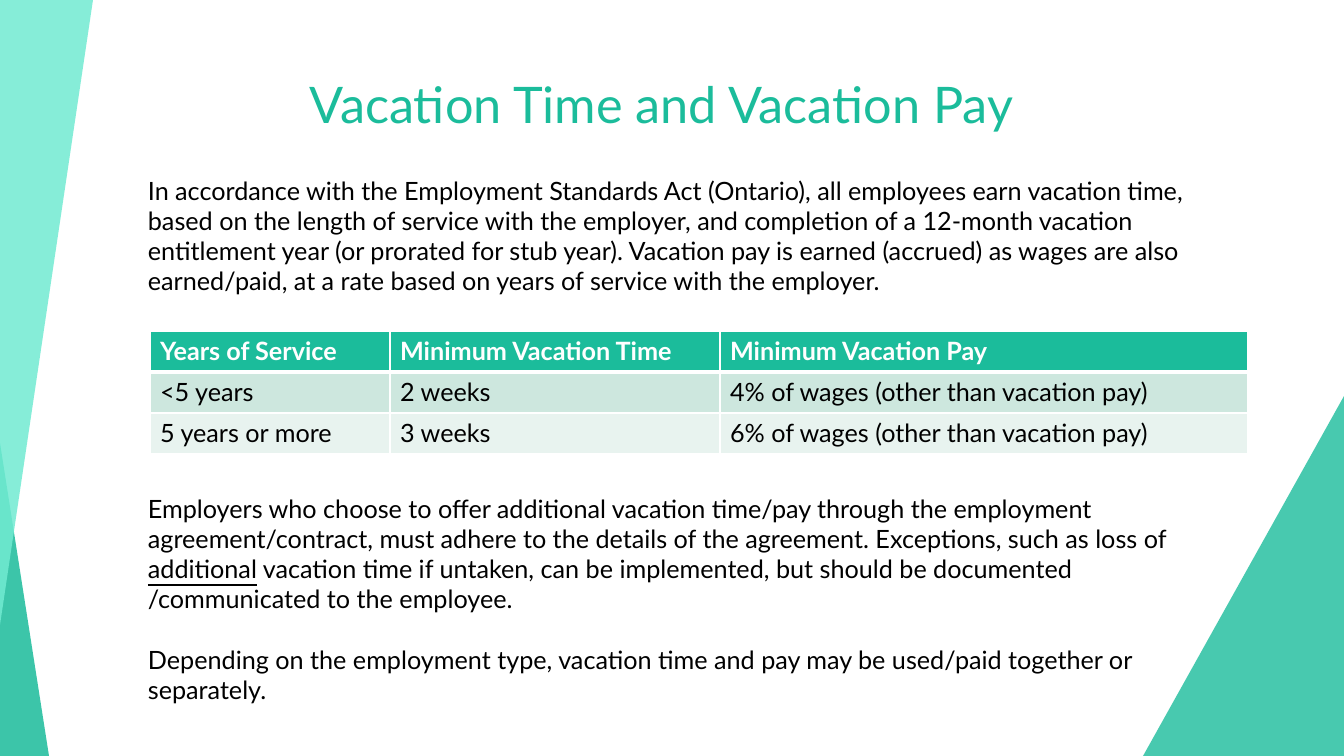
from lxml import etree
from pptx import Presentation, util as u
from pptx.dml.color import RGBColor
from pptx.enum import shapes, text
from pptx.oxml import ns

COLORS = {"green": "1BBC9B", "mint": "71EBD2", "white": "FFFFFF", "black": "000000",
          "row_dark": "CDE7DE", "row_light": "E8F3EF"}
PX = 914400 / 100.8


def px(value):
    return u.Emu(round(value * PX))


class SlideBuilder:
    """Holds the slide and its style, and adds each kind of element."""

    def __init__(self, slide, font="Lato", size=18):
        self.slide = slide
        self.font = font
        self.size = size

    def triangle(self, box, color, apex, opacity, rotation=0):
        shape = self.slide.shapes.add_shape(
            shapes.MSO_SHAPE.ISOSCELES_TRIANGLE, *map(px, box))
        shape.shadow.inherit = False
        shape.adjustments[0] = apex
        shape.rotation = rotation
        shape.fill.solid()
        shape.fill.fore_color.rgb = RGBColor.from_string(COLORS[color])
        shape.line.fill.background()
        fill_color = shape.fill._xPr.find(".//" + ns.qn("a:srgbClr"))
        etree.SubElement(fill_color, ns.qn("a:alpha"), val=str(opacity * 1000))

    def run(self, paragraph, words, color="black", size=None, bold=False, underline=False):
        run = paragraph.add_run()
        run.text = words
        run.font.name = self.font
        run.font.size = u.Pt(size or self.size)
        run.font.bold = bold
        run.font.underline = underline
        run.font.color.rgb = RGBColor.from_string(COLORS[color])

    def textbox(self, box, paragraphs, color="black", size=None, align=None, gap=0):
        frame = self.slide.shapes.add_textbox(*map(px, box)).text_frame
        frame.word_wrap = True
        for index, runs in enumerate(paragraphs):
            paragraph = frame.add_paragraph() if index else frame.paragraphs[0]
            paragraph.alignment = align
            if index:
                paragraph.space_before = u.Pt(gap)
            for words, underline in runs:
                self.run(paragraph, words, color, size, underline=underline)

    def border(self, cell, position, side, width):
        line = etree.Element(ns.qn("a:" + side), w=str(u.Pt(width)))
        fill = etree.SubElement(line, ns.qn("a:solidFill"))
        etree.SubElement(fill, ns.qn("a:srgbClr"), val=COLORS["white"])
        cell._tc.get_or_add_tcPr().insert(position, line)

    def table(self, left, top, widths, row_height, rows, fills):
        table = self.slide.shapes.add_table(
            len(rows), len(widths), px(left), px(top),
            px(sum(widths)), px(row_height * len(rows))).table
        for column, width in zip(table.columns, widths):
            column.width = px(width)
        for row_index, (row, fill) in enumerate(zip(rows, fills)):
            table.rows[row_index].height = px(row_height)
            header = row_index == 0
            edges = {"lnL": 1, "lnR": 1, "lnT": 3 if row_index == 1 else 1,
                     "lnB": 3 if header else 1}
            for column_index, words in enumerate(row):
                cell = table.cell(row_index, column_index)
                cell.fill.solid()
                cell.fill.fore_color.rgb = RGBColor.from_string(COLORS[fill])
                self.run(cell.text_frame.paragraphs[0], words,
                         "white" if header else "black", bold=header)
                for position, (side, width) in enumerate(edges.items()):
                    self.border(cell, position, side, width)


def main():
    presentation = Presentation()
    presentation.slide_width, presentation.slide_height = px(1344), px(756)
    builder = SlideBuilder(presentation.slides.add_slide(presentation.slide_layouts[6]))

    builder.triangle((0, 443, 49, 313), "green", apex=0, opacity=85)
    builder.triangle((0, 0, 93, 625), "mint", apex=1, opacity=85, rotation=180)
    builder.triangle((1143, 396, 201, 360), "green", apex=1, opacity=80)

    builder.textbox((203, 68, 917, 145), [[("Vacation Time and Vacation Pay", False)]],
                    color="green", size=36, align=text.PP_ALIGN.CENTER)
    builder.table(150, 331, (240, 330, 528), 41, (
        ("Years of Service", "Minimum Vacation Time", "Minimum Vacation Pay"),
        ("<5 years", "2 weeks", "4% of wages (other than vacation pay)"),
        ("5 years or more", "3 weeks", "6% of wages (other than vacation pay)"),
    ), ("green", "row_dark", "row_light"))
    builder.textbox((138, 170, 1122, 132), [[(
        "In accordance with the Employment Standards Act (Ontario), all employees earn "
        "vacation time, based on the length of service with the employer, and completion "
        "of a 12-month vacation entitlement year (or prorated for stub year). Vacation pay "
        "is earned (accrued) as wages are also earned/paid, at a rate based on years of "
        "service with the employer.", False)]])
    builder.textbox((138, 488, 1081, 254), [
        [("Employers who choose to offer additional vacation time/pay through the employment "
          "agreement/contract, must adhere to the details of the agreement. Exceptions, such "
          "as loss of ", False),
         ("additional", True),
         (" vacation time if untaken, can be implemented, but should be documented "
          "/communicated to the employee.", False)],
        [("Depending on the employment type, vacation time and pay may be used/paid together "
          "or separately.", False)],
    ], gap=21.6)

    presentation.save("out.pptx")


if __name__ == "__main__":
    main()
